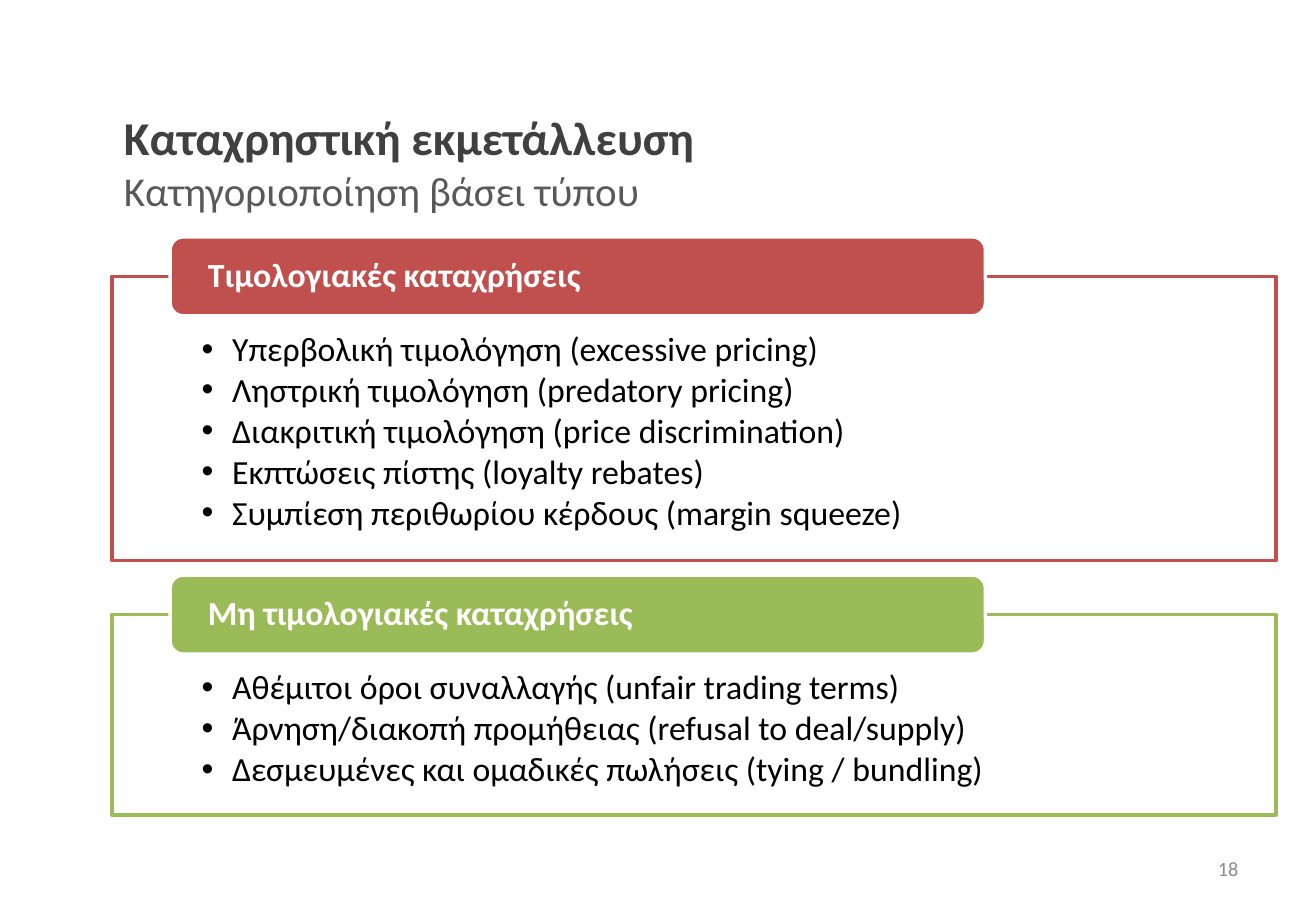
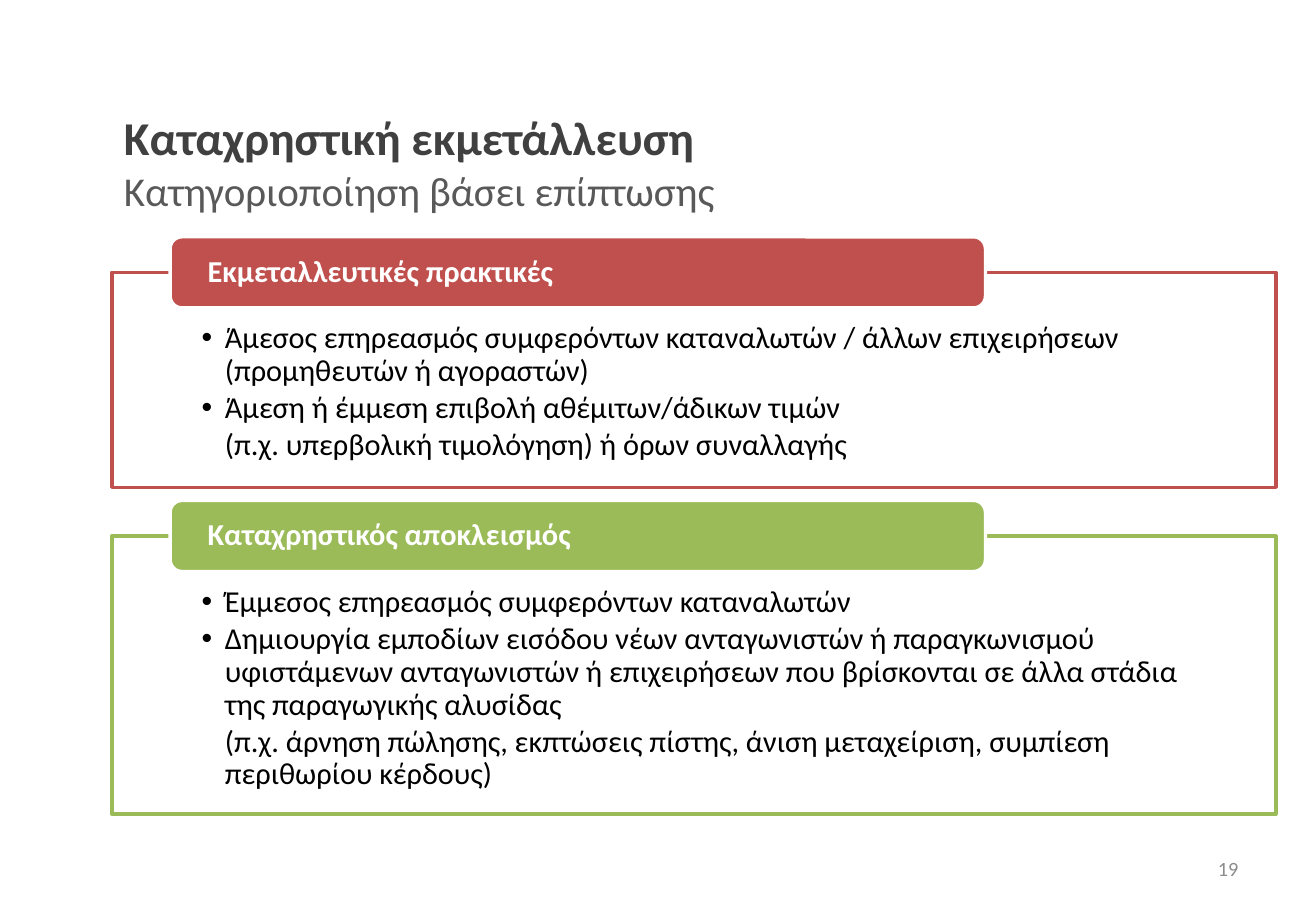
from copy import deepcopy

from lxml.etree import SubElement
from pptx import Presentation
from pptx.dml.color import RGBColor
from pptx.enum.shapes import MSO_SHAPE as SHAPE
from pptx.enum.text import MSO_ANCHOR as ANCHOR, MSO_AUTO_SIZE as FIT, PP_ALIGN as ALIGN
from pptx.oxml.ns import qn
from pptx.util import Inches, Pt

RED, GREEN, WHITE, BLACK = "C0504D", "9BBB59", "FFFFFF", "000000"
DARK, MID, PALE = "404040", "595959", "8C8C8C"
FONT = "Calibri"
LEFT, WIDTH = 0.92, 9.58
PANELS_TOP = 1.95
TWO_CONTENT = 3

# A panel is (heading, colour, frame height, items); an item is (text, bulleted).
SLIDES = [
    {
        "number": 18,
        "subtitle": "Κατηγοριοποίηση βάσει τύπου",
        "size": 20,
        "indent": 0.25,
        "panels": [
            ("Τιμολογιακές καταχρήσεις", RED, 2.34, [
                ("Υπερβολική τιμολόγηση (excessive pricing)", True),
                ("Ληστρική τιμολόγηση (predatory pricing)", True),
                ("Διακριτική τιμολόγηση (price discrimination)", True),
                ("Εκπτώσεις πίστης (loyalty rebates)", True),
                ("Συμπίεση περιθωρίου κέρδους (margin squeeze)", True),
            ]),
            ("Μη τιμολογιακές καταχρήσεις", GREEN, 1.65, [
                ("Αθέμιτοι όροι συναλλαγής (unfair trading terms)", True),
                ("Άρνηση/διακοπή προμήθειας (refusal to deal/supply)", True),
                ("Δεσμευμένες και ομαδικές πωλήσεις (tying / bundling)", True),
            ]),
        ],
    },
    {
        "number": 19,
        "subtitle": "Κατηγοριοποίηση βάσει επίπτωσης",
        "size": 18,
        "indent": 0.19,
        "panels": [
            ("Εκμεταλλευτικές πρακτικές", RED, 1.77, [
                ("Άμεσος επηρεασμός συμφερόντων καταναλωτών / άλλων επιχειρήσεων "
                 "(προμηθευτών ή αγοραστών)", True),
                ("Άμεση ή έμμεση επιβολή αθέμιτων/άδικων τιμών", True),
                ("(π.χ. υπερβολική τιμολόγηση) ή όρων συναλλαγής", False),
            ]),
            ("Καταχρηστικός αποκλεισμός", GREEN, 2.29, [
                ("Έμμεσος επηρεασμός συμφερόντων καταναλωτών", True),
                ("Δημιουργία εμποδίων εισόδου νέων ανταγωνιστών ή παραγκωνισμού "
                 "υφιστάμενων ανταγωνιστών ή επιχειρήσεων που βρίσκονται σε άλλα "
                 "στάδια της παραγωγικής αλυσίδας", True),
                ("(π.χ. άρνηση πώλησης, εκπτώσεις πίστης, άνιση μεταχείριση, "
                 "συμπίεση περιθωρίου κέρδους)", False),
            ]),
        ],
    },
]


def rgb(value):
    return RGBColor.from_string(value)


def style_run(span, size, color, bold=False):
    font = span.font
    font.name, font.size, font.bold = FONT, Pt(size), bold
    font.color.rgb = rgb(color)


def place(box, left, top, width, height):
    box.left, box.top = Inches(left), Inches(top)
    box.width, box.height = Inches(width), Inches(height)


def paint(box, fill, line):
    box.fill.solid()
    box.fill.fore_color.rgb = rgb(fill)
    box.line.color.rgb = rgb(line)
    box.line.width = Pt(2)


def set_frame(box, anchor, insets=(0.1, 0.05, 0.1, 0.05)):
    """Fix wrapping, anchor and insets (left, top, right, bottom)."""
    frame = box.text_frame
    frame.word_wrap, frame.auto_size, frame.vertical_anchor = True, FIT.NONE, anchor
    (frame.margin_left, frame.margin_top,
     frame.margin_right, frame.margin_bottom) = map(Inches, insets)
    return frame


def set_bullet(para, indent, bulleted):
    """Indent the text; hang a bullet in front of it if bulleted."""
    properties = para._p.get_or_add_pPr()
    properties.set("marL", str(Inches(indent)))
    properties.set("indent", str(-Inches(indent) if bulleted else 0))
    if bulleted:
        SubElement(properties, qn("a:buChar")).set("char", "•")
    else:
        SubElement(properties, qn("a:buNone"))


class PanelDeck:
    def __init__(self):
        self.deck = Presentation()
        self.deck.slide_width, self.deck.slide_height = Inches(10.83), Inches(7.5)
        self.slide = None

    def add_slide(self):
        self.slide = self.deck.slides.add_slide(self.deck.slide_layouts[TWO_CONTENT])

    def title(self, heading, subtitle):
        box = self.slide.shapes.title
        place(box, LEFT, 0.85, WIDTH, 0.96)
        frame = set_frame(box, ANCHOR.MIDDLE)
        frame.text = f"{heading}\v{subtitle}"
        para = frame.paragraphs[0]
        para.alignment = ALIGN.LEFT
        first, second = para.runs
        style_run(first, 27.9, DARK, True)
        style_run(second, 24.3, MID)
        # The line break needs the heading's size, or it takes the template's.
        para._p.find(qn("a:br")).append(deepcopy(first._r.rPr))

    def panels(self, panels, size, indent):
        """Stack framed lists, each with a tab centred on its top edge."""
        scale = size / 20
        tab_height, gap = 0.65 * scale, 0.12 * scale
        tab_top = PANELS_TOP
        for index, (heading, color, height, items) in enumerate(panels, start=1):
            frame_top = tab_top + tab_height / 2
            box = self.slide.placeholders[index]
            place(box, LEFT, frame_top, WIDTH, height)
            self.item_list(box, color, items, size, indent)
            self.tab(heading, color, tab_top, tab_height, size)
            tab_top = frame_top + height + gap

    def item_list(self, box, color, items, size, indent):
        scale = size / 20
        paint(box, WHITE, color)
        frame = set_frame(box, ANCHOR.TOP, (0.74, 0.46 * scale, 0.74, 0.16 * scale))
        frame.text = "\n".join(text for text, _ in items)
        for para, (_, bulleted) in zip(frame.paragraphs, items):
            set_bullet(para, indent, bulleted)
            para.line_spacing = 0.9
            para.space_before, para.space_after = Pt(0), Pt(2.7 * scale)
            style_run(para.runs[0], size, BLACK)

    def tab(self, heading, color, top, height, size):
        box = self.slide.shapes.add_shape(
            SHAPE.ROUNDED_RECTANGLE, Inches(1.4), Inches(top), Inches(6.71), Inches(height))
        box.shadow.inherit = False
        paint(box, color, WHITE)
        frame = set_frame(box, ANCHOR.MIDDLE, (0.28, 0, 0.28, 0))
        frame.text = heading
        para = frame.paragraphs[0]
        para.alignment, para.line_spacing = ALIGN.LEFT, 0.9
        style_run(para.runs[0], size, WHITE, True)

    def page_number(self, number):
        box = self.slide.shapes.add_textbox(
            Inches(7.76), Inches(6.95), Inches(2.53), Inches(0.4))
        frame = set_frame(box, ANCHOR.MIDDLE)
        frame.text = str(number)
        para = frame.paragraphs[0]
        para.alignment = ALIGN.RIGHT
        style_run(para.runs[0], 12, PALE)


def main():
    show = PanelDeck()
    for content in SLIDES:
        show.add_slide()
        show.title("Καταχρηστική εκμετάλλευση", content["subtitle"])
        show.panels(content["panels"], content["size"], content["indent"])
        show.page_number(content["number"])
    show.deck.save("out.pptx")


if __name__ == "__main__":
    main()
